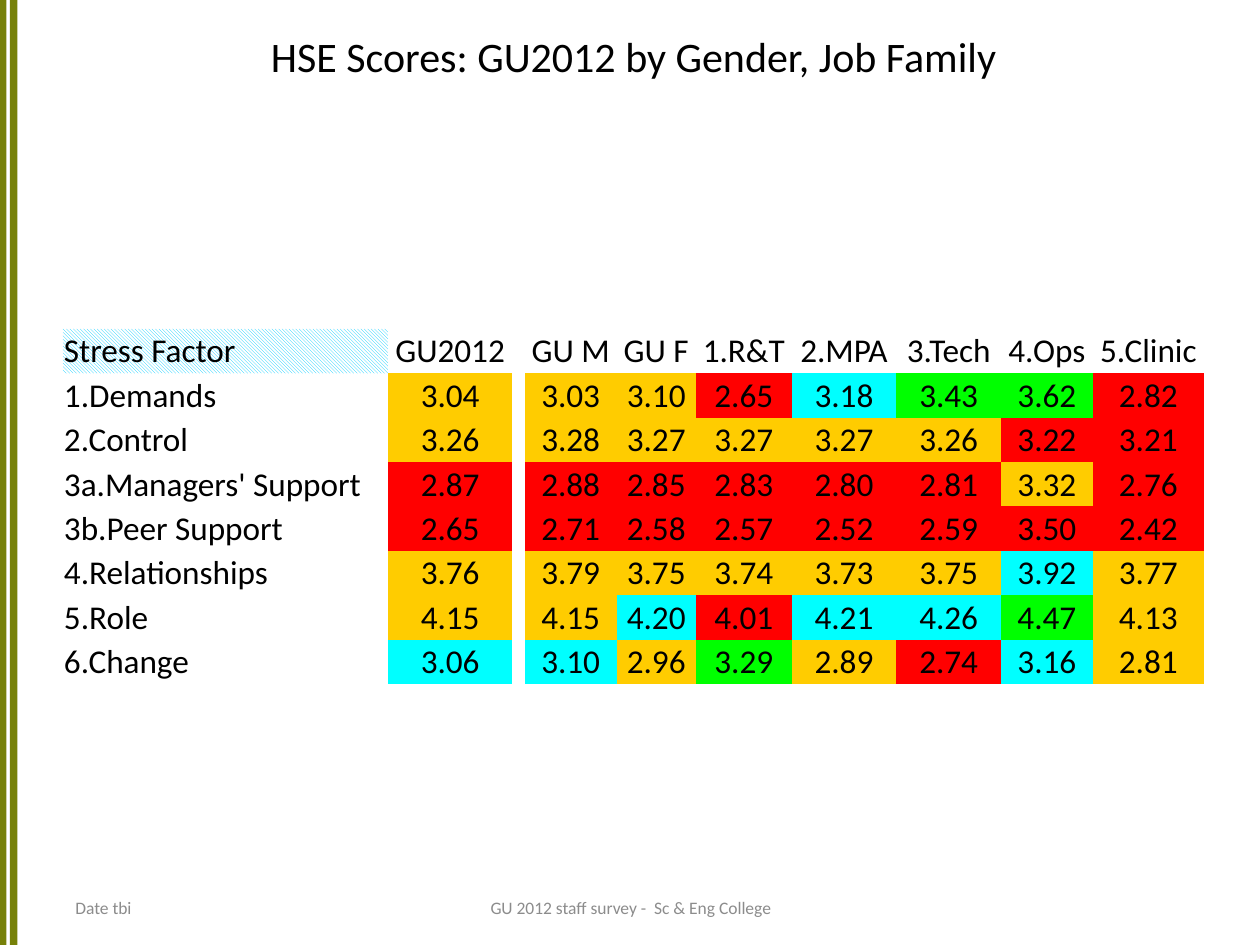
from pptx import Presentation
from pptx.dml.color import RGBColor
from pptx.enum.dml import MSO_PATTERN
from pptx.enum.shapes import MSO_SHAPE
from pptx.enum.text import MSO_ANCHOR, PP_ALIGN
from pptx.util import Cm, Pt

LEFT, CENTER = PP_ALIGN.LEFT, PP_ALIGN.CENTER
MIDDLE = MSO_ANCHOR.MIDDLE
RECTANGLE = MSO_SHAPE.RECTANGLE
DIAGONAL = MSO_PATTERN.LIGHT_DOWNWARD_DIAGONAL
NO_STYLE_NO_GRID = "{2D5ABB26-0587-4C30-8999-92F81FD0307C}"

SLIDE_HEIGHT = 19.05
COLUMN_WIDTHS = [6.55, 2.51, 0.25, 1.85, 1.6, 1.93, 2.11, 2.11, 1.85, 2.24]
GAP_COLUMN = 2
RATING_COLOURS = {"R": "FF0000", "Y": "FFCC00", "B": "00FFFF", "G": "00FF00"}

HEADINGS = ["Stress Factor", "GU2012", "GU M", "GU F", "1.R&T", "2.MPA",
            "3.Tech", "4.Ops", "5.Clinic"]
# Each factor has its scores and one rating letter per score.
FACTORS = [
    ("1.Demands", "3.04 3.03 3.10 2.65 3.18 3.43 3.62 2.82", "YYYRBGGR"),
    ("2.Control", "3.26 3.28 3.27 3.27 3.27 3.26 3.22 3.21", "YYYYYYRR"),
    ("3a.Managers' Support", "2.87 2.88 2.85 2.83 2.80 2.81 3.32 2.76", "RRRRRRYR"),
    ("3b.Peer Support", "2.65 2.71 2.58 2.57 2.52 2.59 3.50 2.42", "RRRRRRRR"),
    ("4.Relationships", "3.76 3.79 3.75 3.74 3.73 3.75 3.92 3.77", "YYYYYYBY"),
    ("5.Role", "4.15 4.15 4.20 4.01 4.21 4.26 4.47 4.13", "YYBRBBGY"),
    ("6.Change", "3.06 3.10 2.96 3.29 2.89 2.74 3.16 2.81", "BBYGYRBY"),
]


def colour(hex_code):
    return RGBColor.from_string(hex_code)


class SlideBuilder:
    font = "Calibri"
    black = "000000"
    grey = "8C8C8C"
    olive = "778109"

    def __init__(self, slide):
        self.slide = slide

    def add_text_run(self, paragraph, text, size, hex_code, alignment):
        paragraph.alignment = alignment
        run = paragraph.add_run()
        run.text = text
        run.font.name = self.font
        run.font.size = Pt(size)
        run.font.color.rgb = colour(hex_code)

    def bar(self, left, width):
        shape = self.slide.shapes.add_shape(
            RECTANGLE, Cm(left), 0, Cm(width), Cm(SLIDE_HEIGHT))
        shape.shadow.inherit = False
        shape.fill.solid()
        shape.fill.fore_color.rgb = colour(self.olive)
        shape.line.fill.background()

    def text(self, box, text, size, hex_code, alignment=CENTER):
        shape = self.slide.shapes.add_textbox(*map(Cm, box))
        frame = shape.text_frame
        frame.word_wrap = True
        frame.vertical_anchor = MIDDLE
        self.add_text_run(frame.paragraphs[0], text, size, hex_code, alignment)

    def cell(self, cell, text, alignment, fill):
        cell.margin_left = cell.margin_right = cell.margin_top = Cm(0.02)
        cell.margin_bottom = 0
        cell.vertical_anchor = MIDDLE
        if text:
            self.add_text_run(cell.text_frame.paragraphs[0], text, 19,
                              self.black, alignment)
        if fill:
            cell.fill.solid()
            cell.fill.fore_color.rgb = colour(fill)
        else:
            cell.fill.background()

    def score_table(self, box):
        """Add the table of scores, each filled by its rating."""
        rows = [(HEADINGS, [None] * len(HEADINGS))]
        for name, scores, ratings in FACTORS:
            fills = [RATING_COLOURS[rating] for rating in ratings]
            rows.append(([name] + scores.split(), [None] + fills))

        frame = self.slide.shapes.add_table(
            len(rows), len(COLUMN_WIDTHS), *map(Cm, box))
        table = frame.table
        table.first_row = table.horz_banding = False
        table._tbl.tblPr[0].text = NO_STYLE_NO_GRID
        for column, width in zip(table.columns, COLUMN_WIDTHS):
            column.width = Cm(width)

        for row, (texts, fills) in enumerate(rows):
            entries = list(zip(texts, fills))
            entries.insert(GAP_COLUMN, ("", None))
            for column, (text, fill) in enumerate(entries):
                alignment = CENTER if column else LEFT
                self.cell(table.cell(row, column), text, alignment, fill)

        corner = table.cell(0, 0).fill
        corner.patterned()
        corner.pattern = DIAGONAL
        corner.fore_color.rgb = colour("00CCFF")
        corner.back_color.rgb = colour("FFFFFF")


def main():
    presentation = Presentation()
    presentation.slide_width = Cm(25.4)
    presentation.slide_height = Cm(SLIDE_HEIGHT)
    builder = SlideBuilder(presentation.slides.add_slide(presentation.slide_layouts[6]))

    builder.bar(0.2, 0.15)
    builder.bar(0, 0.13)
    builder.text((1.27, 0.33, 23.01, 1.6),
                 "HSE Scores: GU2012 by Gender, Job Family", 24, builder.black)
    builder.text((1.27, 17.93, 5.92, 0.74), "Date tbi", 10, builder.grey, LEFT)
    builder.text((8.69, 17.93, 8.05, 0.74),
                 "GU 2012 staff survey -  Sc & Eng College", 10, builder.grey)
    builder.score_table((1.27, 6.63, 23, 7.16))
    presentation.save("out.pptx")


if __name__ == "__main__":
    main()
